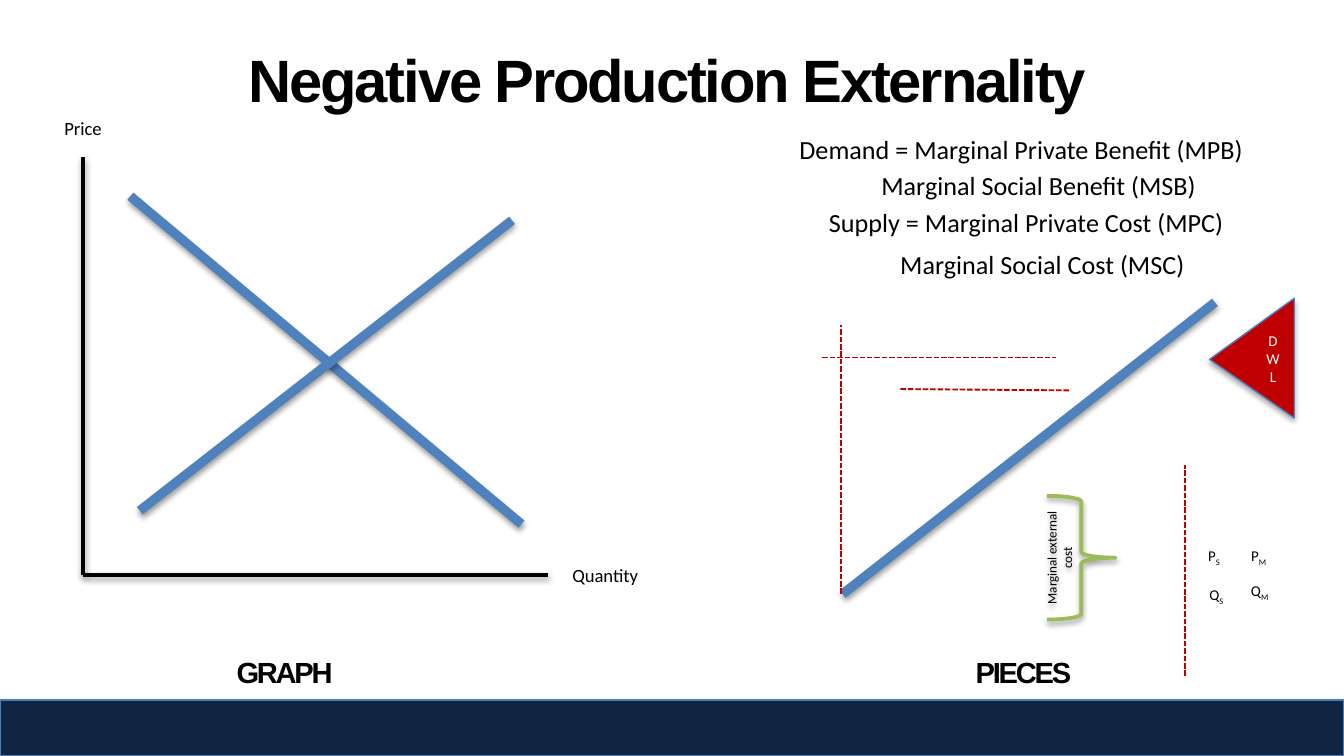
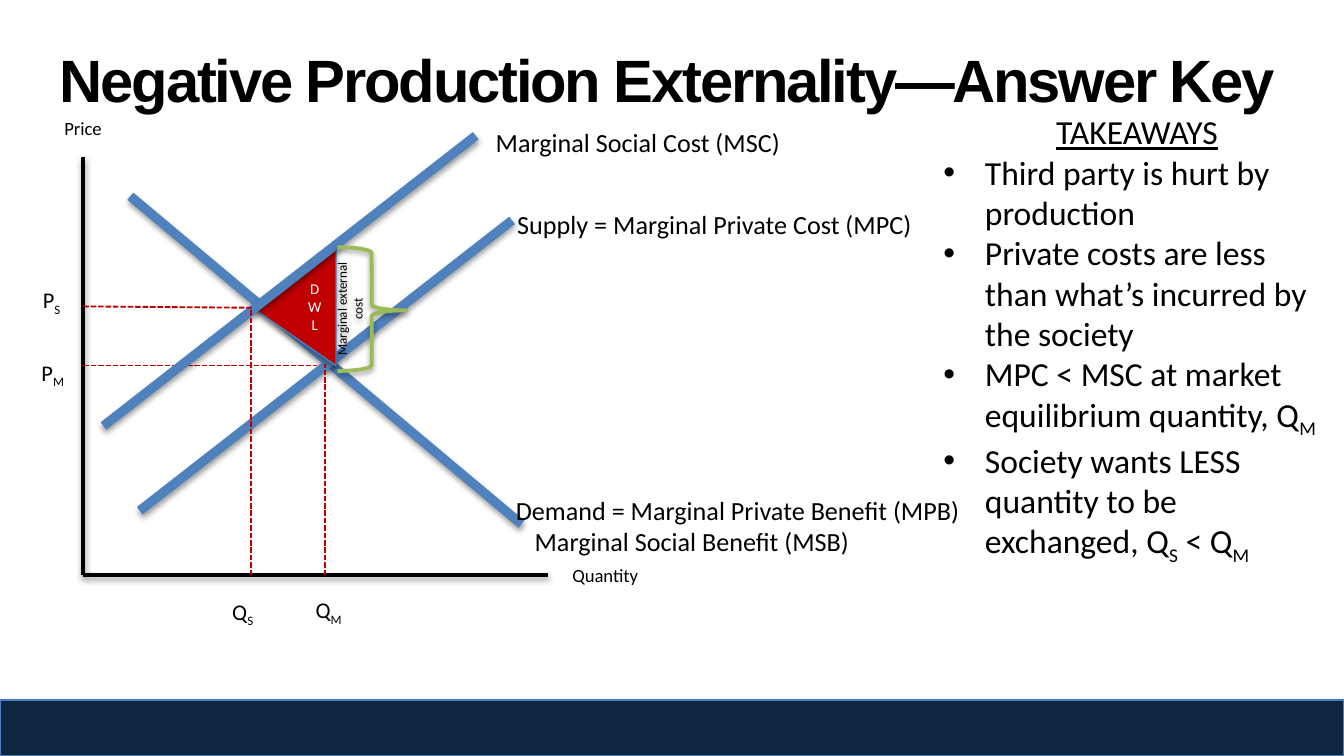
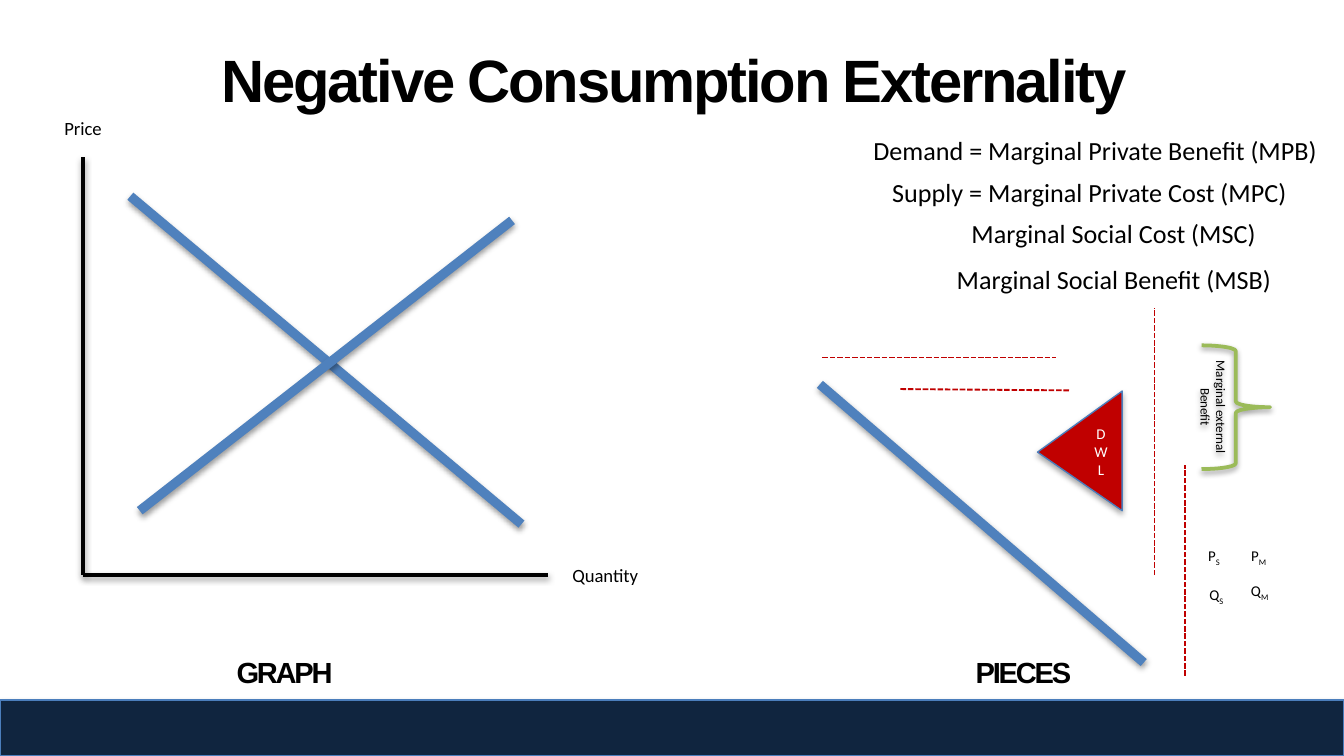
from dataclasses import dataclass
from functools import singledispatch

from lxml import etree
from pptx import Presentation, util as u
from pptx.dml.color import RGBColor
from pptx.enum import dml, shapes, text
from pptx.oxml.ns import qn

WIDTH, HEIGHT = u.Inches(10), u.Inches(5.625)
COLUMNS, ROWS = 100, 56.25

COLORS = {
    "ink": "000000",
    "paper": "FFFFFF",
    "band": "10253F",
    "edge": "4B7EBC",
    "curve": "4F81BD",
    "loss": "C00000",
    "brace": "9BBB59",
}
BODY, HEADING = "Calibri", "Arial"
SHAPE_SHADOW = {"dist": 23000, "alpha": 35000}
LINE_SHADOW = {"dist": 20000, "alpha": 38000}


@dataclass(frozen=True)
class Stroke:
    color: str
    width: float
    dashed: bool = False


AXIS = Stroke("ink", 2)
CURVE = Stroke("curve", 5)
GUIDE = Stroke("loss", 1, dashed=True)


@dataclass(frozen=True)
class Line:
    stroke: Stroke
    x1: float
    y1: float
    x2: float
    y2: float


@dataclass(frozen=True)
class Label:
    """Every second wording is a subscript."""
    wording: tuple[str, ...]
    left: float
    top: float
    width: float
    height: float
    size: float


@dataclass(frozen=True)
class LossTriangle:
    left: float
    top: float


@dataclass(frozen=True)
class CostBrace:
    left: float
    top: float
    words: str
    rotation: float = 0
    flipped: bool = False
    waist: float = 0.5


@dataclass(frozen=True)
class Takeaways:
    heading: str
    points: tuple[tuple[str, ...], ...]


@dataclass(frozen=True)
class Captions:
    left_word: str
    right_word: str


@dataclass(frozen=True)
class Page:
    title: str
    title_width: float
    pieces: list


def col(n: float) -> int:
    return round(WIDTH * n / COLUMNS)


def row(n: float) -> int:
    return round(HEIGHT * n / ROWS)


def box(left: float, top: float, width: float, height: float) -> tuple:
    return col(left), row(top), col(width), row(height)


def rgb(name: str) -> RGBColor:
    return RGBColor.from_string(COLORS[name])


def add_shadow(sp, dist: int, alpha: int) -> None:
    props = sp._element.spPr
    effects = props.find(qn("a:effectLst"))
    if effects is None:
        effects = etree.SubElement(props, qn("a:effectLst"))
    shadow = etree.SubElement(effects, qn("a:outerShdw"), blurRad="40000",
                              dist=str(dist), dir="5400000", rotWithShape="0")
    color = etree.SubElement(shadow, qn("a:srgbClr"), val=COLORS["ink"])
    etree.SubElement(color, qn("a:alpha"), val=str(alpha))


def add_run(p, words: str, size: float, font: str = BODY, color: str = "ink"):
    r = p.add_run()
    r.text = words
    r.font.size = u.Pt(size)
    r.font.name = font
    r.font.color.rgb = rgb(color)
    return r


def add_heading_run(p, words: str, size: float) -> None:
    r = add_run(p, words, size, HEADING)
    r.font.bold = True
    r._r.get_or_add_rPr().set("spc", "-120")


def add_wording(p, wording: tuple[str, ...], size: float) -> None:
    for i, words in enumerate(wording):
        r = add_run(p, words, size)
        if i % 2:
            r._r.get_or_add_rPr().set("baseline", "-25000")


def add_text_frame(s, area: tuple, wrap: bool = True, grow: bool = False):
    tf = s.shapes.add_textbox(*area).text_frame
    tf.word_wrap = wrap
    tf.auto_size = (text.MSO_AUTO_SIZE.SHAPE_TO_FIT_TEXT if grow
                    else text.MSO_AUTO_SIZE.NONE)
    return tf


def add_heading_frame(s, area: tuple, top_inset: float):
    tf = add_text_frame(s, area)
    tf.margin_left = tf.margin_right = col(0.7)
    tf.margin_top, tf.margin_bottom = row(top_inset), row(0.4)
    return tf


def add_preset(s, kind, area: tuple, fill: str | None, line: str, width: float):
    sp = s.shapes.add_shape(kind, *area)
    if fill:
        sp.fill.solid()
        sp.fill.fore_color.rgb = rgb(fill)
    else:
        sp.fill.background()
    sp.line.color.rgb = rgb(line)
    sp.line.width = u.Pt(width)
    sp.shadow.inherit = False
    add_shadow(sp, **(SHAPE_SHADOW if fill else LINE_SHADOW))
    return sp


def add_vertical_text(sp, words: str, size: float, color: str) -> None:
    tf = sp.text_frame
    tf.word_wrap = True
    tf.vertical_anchor = text.MSO_ANCHOR.MIDDLE
    tf._txBody.bodyPr.set("vert", "vert")
    p = tf.paragraphs[0]
    p.alignment = text.PP_ALIGN.CENTER
    add_run(p, words, size, color=color)


@singledispatch
def draw(piece, s) -> None:
    raise TypeError(piece)


@draw.register
def draw_line(piece: Line, s) -> None:
    c = s.shapes.add_connector(shapes.MSO_CONNECTOR.STRAIGHT,
                               col(piece.x1), row(piece.y1),
                               col(piece.x2), row(piece.y2))
    c.line.color.rgb = rgb(piece.stroke.color)
    c.line.width = u.Pt(piece.stroke.width)
    if piece.stroke.dashed:
        c.line.dash_style = dml.MSO_LINE.SQUARE_DOT
        etree.SubElement(c._element.spPr, qn("a:effectLst"))
    else:
        add_shadow(c, **LINE_SHADOW)


@draw.register
def draw_label(piece: Label, s) -> None:
    area = box(piece.left, piece.top, piece.width, piece.height)
    tf = add_text_frame(s, area, wrap=False, grow=True)
    add_wording(tf.paragraphs[0], piece.wording, piece.size)


@draw.register
def draw_triangle(piece: LossTriangle, s) -> None:
    sp = add_preset(s, shapes.MSO_SHAPE.ISOSCELES_TRIANGLE,
                    box(piece.left, piece.top, 8.9, 6.3), "loss", "edge", 0.75)
    sp.adjustments[0] = 0.49
    sp.rotation = 270
    add_vertical_text(sp, "DWL", 8, "paper")


@draw.register
def draw_brace(piece: CostBrace, s) -> None:
    sp = add_preset(s, shapes.MSO_SHAPE.LEFT_BRACE,
                    box(piece.left, piece.top, 5.1, 9.2), None, "brace", 2)
    sp.adjustments[1] = piece.waist
    sp.rotation = piece.rotation
    if piece.flipped:
        sp._element.spPr.find(qn("a:xfrm")).set("flipH", "1")
    add_vertical_text(sp, piece.words, 7, "ink")


@draw.register
def draw_takeaways(piece: Takeaways, s) -> None:
    tf = add_text_frame(s, box(69.2, 7.8, 30.8, 37.4), grow=True)
    p = tf.paragraphs[0]
    p.alignment = text.PP_ALIGN.CENTER
    add_run(p, piece.heading, 18).font.underline = True
    for point in piece.points:
        p = tf.add_paragraph()
        props = p._p.get_or_add_pPr()
        props.set("marL", str(col(3.1)))
        props.set("indent", str(-col(3.1)))
        etree.SubElement(props, qn("a:buFont"), typeface=HEADING)
        etree.SubElement(props, qn("a:buChar"), char="•")
        add_wording(p, point, 18)


@draw.register
def draw_captions(piece: Captions, s) -> None:
    p = add_heading_frame(s, box(1.9, 45.9, 96.3, 6), 0.7).paragraphs[0]
    stops = etree.SubElement(p._p.get_or_add_pPr(), qn("a:tabLst"))
    for stop in (15, 70):
        etree.SubElement(stops, qn("a:tab"), pos=str(col(stop)), algn="l")
    add_heading_run(p, "\t", 30.7)
    add_heading_run(p, f"{piece.left_word}\t{piece.right_word}", 15.6)


def draw_page(prs, page: Page) -> None:
    s = prs.slides.add_slide(prs.slide_layouts[6])
    add_preset(s, shapes.MSO_SHAPE.RECTANGLE, box(0, 52.1, 100, 4.15),
               "band", "edge", 0.75)
    tf = add_heading_frame(s, box(1.5, 2.3, page.title_width, 9.4), 0.9)
    p = tf.paragraphs[0]
    p.alignment = text.PP_ALIGN.CENTER
    add_heading_run(p, page.title, 32)
    for piece in MARKET_GRAPH + page.pieces:
        draw(piece, s)


def demand(left: float, top: float) -> Label:
    return Label(("Demand = Marginal Private Benefit (MPB)",), left, top, 35.4, 3.4, 14)


def supply(left: float, top: float) -> Label:
    return Label(("Supply = Marginal Private Cost (MPC)",), left, top, 31.7, 3.4, 14)


def social_cost(left: float, top: float) -> Label:
    return Label(("Marginal Social Cost (MSC)",), left, top, 23.4, 3.4, 14)


def social_benefit(left: float, top: float) -> Label:
    return Label(("Marginal Social Benefit (MSB)",), left, top, 25.7, 3.4, 14)


MARKET_GRAPH = [
    Line(AXIS, 6.2, 42.8, 40.8, 42.8),
    Line(AXIS, 6.2, 11.7, 6.2, 42.8),
    Label(("Quantity",), 41.6, 41.5, 7, 2.7, 10),
    Label(("Price",), 3.8, 8.2, 4.8, 2.7, 10),
    Line(CURVE, 9.7, 14.6, 38.8, 39),
    Line(CURVE, 38.1, 16.4, 10.4, 38),
]
LOOSE_PIECES = [
    Line(GUIDE, 61.2, 26.6, 78.6, 26.6),
    Line(GUIDE, 88.2, 50.3, 88.2, 34.6),
    Line(GUIDE, 67, 28.95, 79.6, 29.05),
    Label(("P", "M"), 92.1, 40.2, 3.2, 2.4, 8),
    Label(("Q", "M"), 92.1, 42.8, 3.4, 2.4, 8),
    Label(("Q", "S"), 89, 43.1, 3.1, 2.4, 8),
    Label(("P", "S"), 88.9, 40.2, 2.9, 2.4, 8),
    Captions("GRAPH", "PIECES"),
]
PAGES = [
    Page("Negative Production Externality", 96.3, LOOSE_PIECES + [
        social_cost(66, 18),
        demand(58.5, 9.4),
        LossTriangle(88.7, 23.5),
        supply(60.7, 14.9),
        social_benefit(64.6, 12.1),
        Line(CURVE, 90.4, 22.5, 62.7, 44.2),
        Line(GUIDE, 62.6, 44.2, 62.6, 24.2),
        CostBrace(77.9, 36.9, "Marginal external cost", rotation=180),
    ]),
    Page("Negative Production Externality—Answer Key", 96.3, [
        Line(GUIDE, 6.2, 27.2, 23.6, 27.2),
        Line(GUIDE, 24.2, 42.8, 24.2, 27.1),
        Label(("P", "M"), 2.1, 26.2, 3.9, 3, 12),
        Label(("Q", "M"), 22.5, 43.9, 4.1, 3, 12),
        social_cost(35.9, 8.9),
        demand(37.4, 36.3),
        LossTriangle(17.4, 19.6),
        supply(37.5, 15),
        social_benefit(38.8, 38.6),
        Label(("Q", "S"), 16.3, 44, 3.7, 3, 12),
        Label(("P", "S"), 2.2, 20.8, 3.4, 3, 12),
        Line(CURVE, 35.4, 10.1, 7.7, 31.7),
        Line(GUIDE, 6.2, 22.8, 18.7, 22.9),
        Line(GUIDE, 18.7, 42.8, 18.7, 22.9),
        Takeaways("TAKEAWAYS", (
            ("Third party is hurt by production",),
            ("Private costs are less than what’s incurred by the society",),
            ("MPC < MSC at market equilibrium quantity, Q", "M"),
            ("Society wants LESS quantity to be exchanged, Q", "S", " < Q", "M"),
        )),
        CostBrace(25.1, 18.4, "Marginal external cost", rotation=180, waist=0.49),
    ]),
    Page("Negative Consumption Externality", 97.3, LOOSE_PIECES + [
        social_cost(71.3, 15.7),
        demand(64, 9.5),
        LossTriangle(75.9, 30.4),
        supply(65.4, 12.6),
        social_benefit(70.2, 19.1),
        Line(CURVE, 61, 28.6, 85.1, 49.3),
        Line(GUIDE, 85.9, 42.8, 85.9, 22.9),
        CostBrace(89.4, 25.7, "Marginal external Benefit", flipped=True),
    ]),
]


def main() -> None:
    prs = Presentation()
    prs.slide_width, prs.slide_height = WIDTH, HEIGHT
    for page in PAGES:
        draw_page(prs, page)
    prs.save("out.pptx")


if __name__ == "__main__":
    main()
